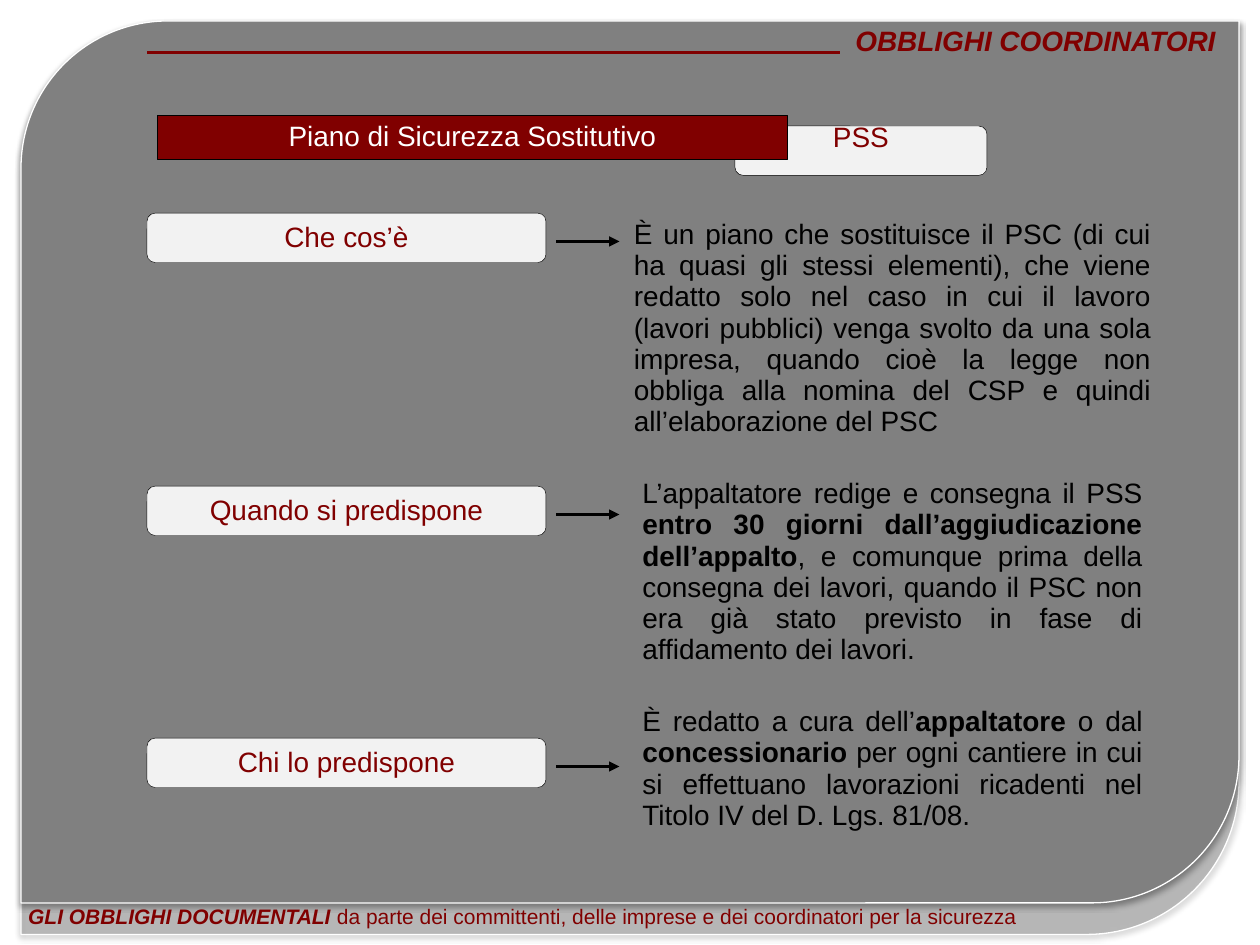
from dataclasses import dataclass
from typing import NamedTuple, Optional

from lxml import etree
from pptx import Presentation
from pptx import util as u
from pptx.dml.color import RGBColor
from pptx.enum import shapes, text
from pptx.oxml import ns


@dataclass(frozen=True)
class Theme:
    """Colours, font and type sizes of the slide."""
    maroon: str = "800000"
    grey: str = "808080"
    pale: str = "F2F2F2"
    white: str = "FFFFFF"
    black: str = "000000"
    font: str = "Arial"
    body: float = 16
    footer: float = 12
    spacing: float = 0.93


class Area(NamedTuple):
    """Left, top, width and height in grid cells."""
    left: float
    top: float
    width: float
    height: float


class Phrase(NamedTuple):
    """A stretch of text with its emphasis."""
    words: str
    bold: bool = False
    italic: bool = False


@dataclass(frozen=True)
class Topic:
    """A question, the row of its label, and its answer."""
    question: str
    row: float
    answer_area: Area
    answer: tuple[Phrase, ...]
    rounded: bool = False


THEME = Theme()
COLUMNS, ROWS = 120, 90
WIDTH, HEIGHT = u.Inches(10), u.Inches(7.5)
ALIGN, ANCHOR = text.PP_ALIGN, text.MSO_ANCHOR
RECT = shapes.MSO_SHAPE.RECTANGLE
ROUNDED = shapes.MSO_SHAPE.ROUNDED_RECTANGLE
LEAF = shapes.MSO_SHAPE.ROUND_2_DIAG_RECTANGLE

TOPICS = (
    Topic("Che cos’è", 20.3, Area(58, 19, 54, 24.6), (
        Phrase("È un piano che sostituisce il PSC (di cui ha quasi gli stessi elementi), "
               "che viene redatto solo nel caso in cui il lavoro (lavori pubblici) venga "
               "svolto da una sola impresa, quando cioè la legge non obbliga alla nomina "
               "del CSP e quindi all’elaborazione del PSC"),), True),
    Topic("Quando si predispone", 46.3, Area(60, 45, 50, 19.3), (
        Phrase("L’appaltatore redige e consegna il PSS "),
        Phrase("entro 30 giorni dall’aggiudicazione dell’appalto", True),
        Phrase(", e comunque prima della consegna dei lavori, quando il PSC non era già "
               "stato previsto in fase di affidamento dei lavori. "))),
    Topic("Chi lo predispone", 70.3, Area(60, 66.7, 50, 13.3), (
        Phrase("È redatto a cura dell’"), Phrase("appaltatore ", True),
        Phrase("o dal "), Phrase("concessionario ", True),
        Phrase("per ogni cantiere in cui si effettuano lavorazioni ricadenti nel "
               "Titolo IV del D. Lgs. 81/08. "))),
)


def across(columns: float) -> int:
    """Convert columns to a length."""
    return round(WIDTH * columns / COLUMNS)


def down(rows: float) -> int:
    """Convert rows to a length."""
    return round(HEIGHT * rows / ROWS)


def place(area: Area) -> tuple[int, int, int, int]:
    """Convert a grid area to slide lengths."""
    return across(area.left), down(area.top), across(area.width), down(area.height)


def write(holder, phrases: tuple[Phrase, ...], color: str, align=ALIGN.JUSTIFY,
          anchor=ANCHOR.MIDDLE, size: float = THEME.body, wrap: bool = True,
          inset: float = 0.05) -> None:
    """Fill one paragraph with formatted phrases."""
    frame = holder.text_frame
    frame.auto_size = text.MSO_AUTO_SIZE.NONE
    frame.word_wrap, frame.vertical_anchor = wrap, anchor
    frame.margin_left = frame.margin_right = u.Inches(0.1)
    frame.margin_top = frame.margin_bottom = u.Inches(inset)
    paragraph = frame.paragraphs[0]
    paragraph.alignment, paragraph.line_spacing = align, THEME.spacing
    for phrase in phrases:
        run = paragraph.add_run()
        run.text = phrase.words
        run.font.name, run.font.size = THEME.font, u.Pt(size)
        run.font.bold, run.font.italic = phrase.bold, phrase.italic
        run.font.color.rgb = RGBColor.from_string(color)


def add_box(slide, kind, area: Area, fill: Optional[str] = None,
            line: str = THEME.black, weight: float = 0.25):
    """Add a flat shape, or a bare one when there is no fill."""
    box = slide.shapes.add_shape(kind, *place(area))
    box.shadow.inherit = False
    if fill:
        box.fill.solid()
        box.fill.fore_color.rgb = RGBColor.from_string(fill)
        box.line.color.rgb = RGBColor.from_string(line)
        box.line.width = u.Pt(weight)
    else:
        box.fill.background()
        box.line.fill.background()
    return box


def add_panel(slide, area: Area, opacity: int = 100) -> None:
    """Add a background panel with a soft shadow."""
    panel = add_box(slide, LEAF, area, THEME.grey, THEME.white, 0.75)
    properties = panel.element.spPr
    if opacity < 100:
        tint = properties.find(ns.qn("a:solidFill")).find(ns.qn("a:srgbClr"))
        etree.SubElement(tint, ns.qn("a:alpha"), val=str(opacity * 1000))
    shadow = etree.SubElement(properties.find(ns.qn("a:effectLst")), ns.qn("a:outerShdw"),
                              blurRad=str(u.Pt(3.1)), dist=str(u.Pt(1.8)),
                              dir="5400000", rotWithShape="0")
    shade = etree.SubElement(shadow, ns.qn("a:srgbClr"), val=THEME.black)
    etree.SubElement(shade, ns.qn("a:alpha"), val="35000")


def add_rule(slide, kind, start: float, end: float, row: float, color: str,
             weight: float, arrow: bool = False) -> None:
    """Add a level line, with an arrowhead if wanted."""
    rule = slide.shapes.add_connector(kind, across(start), down(row), across(end), down(row))
    rule.line.color.rgb = RGBColor.from_string(color)
    rule.line.width = u.Pt(weight)
    if arrow:
        etree.SubElement(rule.line._get_or_add_ln(), ns.qn("a:tailEnd"), type="triangle")
    etree.SubElement(rule.element.spPr, ns.qn("a:effectLst"))


def add_frame(slide) -> None:
    """Draw the panels, footer, title and title rule."""
    add_panel(slide, Area(2, 2, 116, 87), 40)
    add_panel(slide, Area(2, 2, 116, 84))
    footer = slide.shapes.add_textbox(*place(Area(1.5, 85.7, 104, 3.4)))
    write(footer, (Phrase("GLI OBBLIGHI DOCUMENTALI ", True, True),
                   Phrase("da parte dei committenti, delle imprese e dei coordinatori "
                          "per la sicurezza")),
          THEME.maroon, size=THEME.footer, inset=0.04)
    title = slide.shapes.title
    title.left, title.top, title.width, title.height = place(Area(75, 2, 42, 4.1))
    write(title, (Phrase("OBBLIGHI COORDINATORI", True, True),), THEME.maroon,
          ALIGN.RIGHT, inset=0.04)
    slide.shapes._spTree.append(title.element)
    add_rule(slide, shapes.MSO_CONNECTOR.STRAIGHT, 80, 14, 5, THEME.maroon, 2)


def add_heading(slide) -> None:
    """Draw the plan name over its abbreviation."""
    abbreviation = add_box(slide, ROUNDED, Area(70, 12, 24, 4.7), THEME.pale)
    write(abbreviation, (Phrase("PSS"),), THEME.maroon, ALIGN.CENTER, inset=0)
    abbreviation.text_frame.margin_bottom = u.Inches(0.2)
    plan = add_box(slide, RECT, Area(15, 11, 60, 4.2), THEME.maroon)
    write(plan, (Phrase("Piano di Sicurezza Sostitutivo"),), THEME.white, ALIGN.CENTER)


def add_topic(slide, topic: Topic) -> None:
    """Draw a question, its arrow and its answer."""
    question = add_box(slide, ROUNDED, Area(14, topic.row, 38, 4.7), THEME.pale)
    write(question, (Phrase(topic.question),), THEME.maroon, ALIGN.CENTER, wrap=False)
    add_rule(slide, shapes.MSO_CONNECTOR.ELBOW, 53, 59, topic.row + 2.7,
             THEME.black, 1.5, True)
    if topic.rounded:
        answer, anchor = add_box(slide, ROUNDED, topic.answer_area), ANCHOR.MIDDLE
    else:
        answer, anchor = slide.shapes.add_textbox(*place(topic.answer_area)), ANCHOR.TOP
    write(answer, topic.answer, THEME.black, anchor=anchor)


def main() -> None:
    """Build and save the slide."""
    deck = Presentation()
    deck.slide_width, deck.slide_height = WIDTH, HEIGHT
    slide = deck.slides.add_slide(deck.slide_layouts[5])
    add_frame(slide)
    add_heading(slide)
    for topic in TOPICS:
        add_topic(slide, topic)
    deck.save("out.pptx")


if __name__ == "__main__":
    main()
